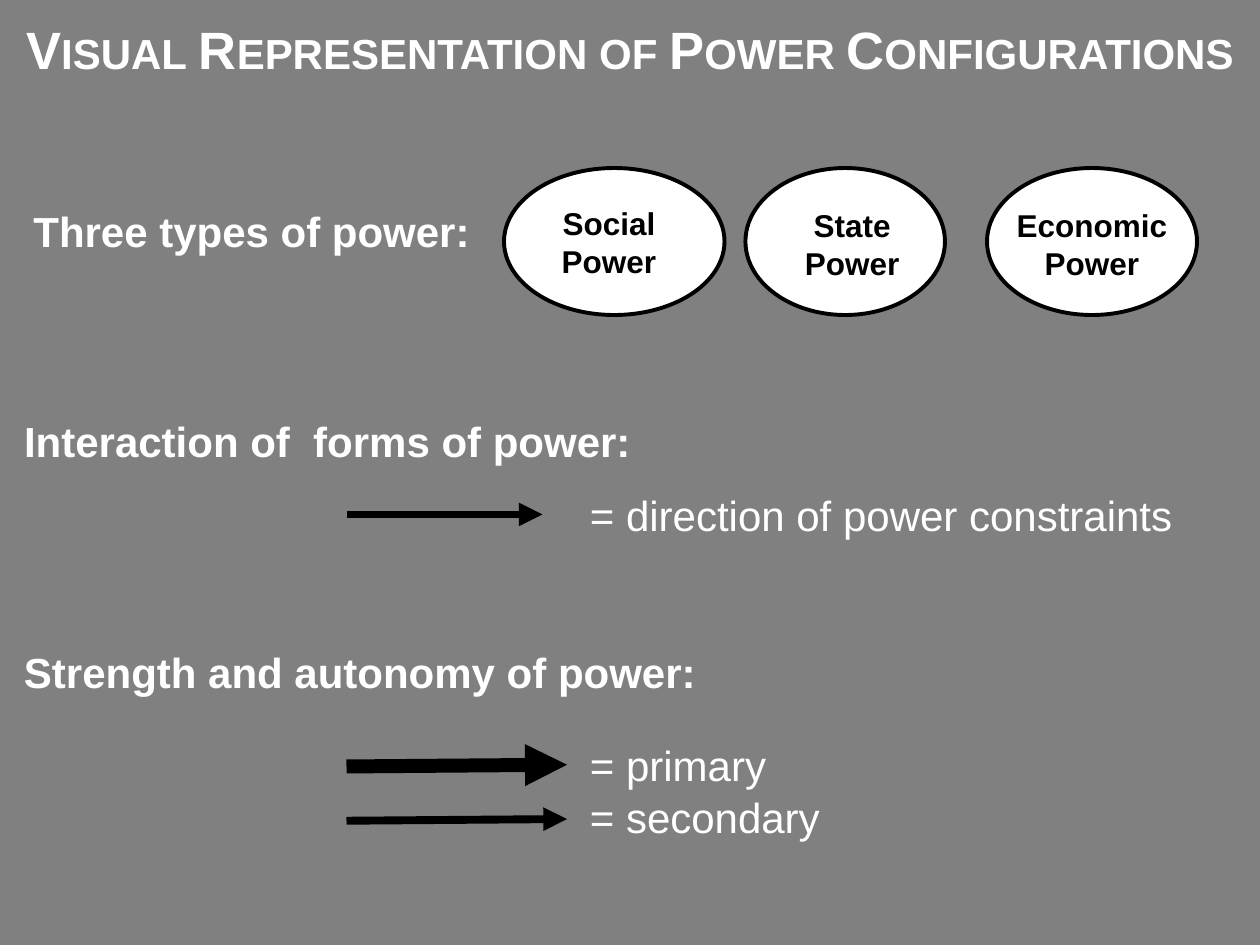
import pptx
import pptx.dml.color
import pptx.enum.shapes
import pptx.enum.text
import pptx.oxml.ns
import pptx.util
from lxml import etree

Pt = pptx.util.Pt
ALIGN = pptx.enum.text.PP_ALIGN
COLORS = {"background": "808080", "light": "FFFFFF", "dark": "000000"}


class PowerSlide:
    font = "Arial"
    heading_size = 24

    def __init__(self, deck):
        self.slide = deck.slides.add_slide(deck.slide_layouts[6])
        self.end_group()
        fill = self.slide.background.fill
        fill.solid()
        fill.fore_color.rgb = self.color("background")

    def color(self, name):
        return pptx.dml.color.RGBColor.from_string(COLORS[name])

    def start_group(self):
        self.canvas = self.slide.shapes.add_group_shape().shapes

    def end_group(self):
        self.canvas = self.slide.shapes

    def text(self, wording, left, top, width, height=37, size=heading_size,
             color="light", bold=False, align=ALIGN.LEFT, small_caps=False):
        box = self.canvas.add_textbox(Pt(left), Pt(top), Pt(width), Pt(height))
        frame = box.text_frame
        frame.word_wrap = True
        frame.text = wording
        for paragraph in frame.paragraphs:
            paragraph.alignment = align
            for run in paragraph.runs:
                run.font.name = self.font
                run.font.size = Pt(size)
                run.font.bold = bold
                run.font.color.rgb = self.color(color)
                if small_caps:
                    run._r.get_or_add_rPr().set("cap", "small")

    def ellipse(self, left, top, width, height):
        oval = self.canvas.add_shape(pptx.enum.shapes.MSO_SHAPE.OVAL,
                                     Pt(left), Pt(top), Pt(width), Pt(height))
        oval.shadow.inherit = False
        oval.fill.solid()
        oval.fill.fore_color.rgb = self.color("light")
        oval.line.color.rgb = self.color("dark")
        oval.line.width = Pt(2.25)

    def arrow(self, start_x, start_y, end_x, end_y, weight):
        arrow = self.canvas.add_connector(
            pptx.enum.shapes.MSO_CONNECTOR.STRAIGHT,
            Pt(start_x), Pt(start_y), Pt(end_x), Pt(end_y))
        arrow.line.color.rgb = self.color("dark")
        arrow.line.width = Pt(weight)
        qn = pptx.oxml.ns.qn
        properties = arrow._element.spPr
        etree.SubElement(properties.find(qn("a:ln")), qn("a:tailEnd"), type="triangle")
        etree.SubElement(properties, qn("a:effectLst"))


def main():
    deck = pptx.Presentation()
    deck.slide_width, deck.slide_height = Pt(720), Pt(540)
    page = PowerSlide(deck)

    page.text("Visual Representation of Power Configurations", 0, 6, 720, 44,
              size=30, bold=True, align=ALIGN.CENTER, small_caps=True)

    page.start_group()
    power_types = [
        ("Economic\nPower", (564, 120), (570, 114, 108, 49)),
        ("Social Power", (288, 126), (300, 113, 96, 40)),
        ("State Power", (426, 114), (444, 114, 86, 27)),
    ]
    for power, (left, width), label_area in power_types:
        page.ellipse(left, 96, width, 84)
        page.text(power, *label_area, size=18, color="dark", bold=True,
                  align=ALIGN.CENTER)
    page.text("Three types of power:", 12, 114, 348, bold=True)
    page.end_group()

    page.text(" Interaction of  forms of power:", 0, 234, 456, bold=True)

    meaning_left, arrow_left = 330, 198
    page.start_group()
    page.arrow(arrow_left, 294, 310, 294, 4.5)
    page.text("= direction of power constraints", meaning_left, 276, 410)

    page.start_group()
    page.text(" Strength and autonomy of power:", 0, 366, 720, 153, bold=True)
    strengths = [("= primary", 419, 246, 438, 8), ("= secondary", 449, 252, 469, 4.5)]
    for meaning, top, width, arrow_y, weight in strengths:
        page.text(meaning, meaning_left, top, width)
        page.arrow(arrow_left, arrow_y, 324, arrow_y - 1, weight)

    deck.save("out.pptx")


if __name__ == "__main__":
    main()
